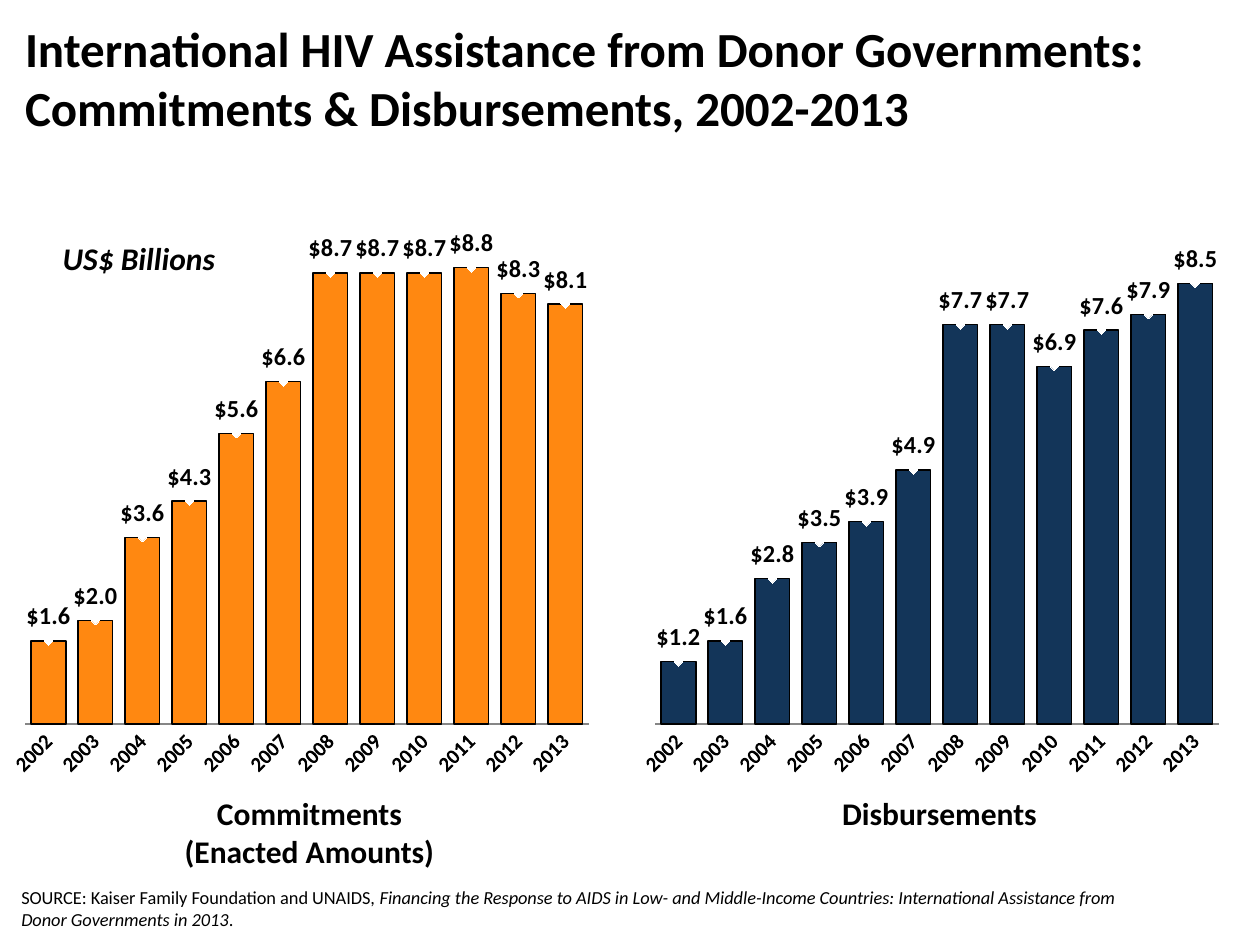
from dataclasses import dataclass

from lxml.etree import SubElement
from pptx import Presentation
from pptx.chart.data import CategoryChartData
from pptx.dml.color import RGBColor
from pptx.enum.chart import XL_CHART_TYPE, XL_LABEL_POSITION, XL_MARKER_STYLE, XL_TICK_MARK
from pptx.enum.text import MSO_ANCHOR, MSO_AUTO_SIZE, PP_ALIGN
from pptx.oxml import parse_xml
from pptx.oxml.ns import nsdecls, qn
from pptx.util import Cm, Pt


@dataclass(frozen=True)
class Theme:
    font: str = "Calibri"
    text: RGBColor = RGBColor(0, 0, 0)
    paper: RGBColor = RGBColor(255, 255, 255)
    axis: RGBColor = RGBColor(0x86, 0x86, 0x86)
    orange: RGBColor = RGBColor(0xFF, 0x88, 0x11)
    navy: RGBColor = RGBColor(0x13, 0x35, 0x59)
    title_size: float = 28
    caption_size: float = 18
    label_size: float = 14
    tick_size: float = 12
    source_size: float = 10.5


THEME = Theme()
YEARS = [str(year) for year in range(2002, 2014)]
COMMITMENTS = [1.6, 2.0, 3.6, 4.3, 5.6, 6.6, 8.7, 8.7, 8.7, 8.8, 8.3, 8.1]
DISBURSEMENTS = [1.2, 1.6, 2.8, 3.5, 3.9, 4.9, 7.7, 7.7, 6.9, 7.6, 7.9, 8.5]
DOLLARS = '"$"#,##0.0'
PLOT_LAYOUT = {
    "layoutTarget": "inner", "xMode": "edge", "yMode": "edge",
    "x": 0.016, "y": 0.076, "w": 0.968, "h": 0.823,
}


def set_values(target, values):
    for name, value in values.items():
        setattr(target, name, value)


def format_font(font, size, bold=False, italic=False):
    set_values(font, {"name": THEME.font, "size": Pt(size), "bold": bold, "italic": italic})
    font.color.rgb = THEME.text


def place(shape, box):
    set_values(shape, dict(zip(("left", "top", "width", "height"), map(Cm, box))))


def add_title(slide, box, text):
    title = slide.shapes.title
    place(title, box)
    set_values(title.text_frame, {
        "text": text, "word_wrap": True,
        "vertical_anchor": MSO_ANCHOR.TOP, "auto_size": MSO_AUTO_SIZE.NONE,
    })
    paragraph = title.text_frame.paragraphs[0]
    paragraph.alignment = PP_ALIGN.LEFT
    format_font(paragraph.runs[0].font, THEME.title_size, bold=True)


def add_caption(slide, box, lines, italic=False):
    frame = slide.shapes.add_textbox(*map(Cm, box)).text_frame
    set_values(frame, {
        "text": "\n".join(lines), "word_wrap": False,
        "auto_size": MSO_AUTO_SIZE.SHAPE_TO_FIT_TEXT,
    })
    for paragraph in frame.paragraphs:
        paragraph.alignment = PP_ALIGN.CENTER
        format_font(paragraph.runs[0].font, THEME.caption_size, bold=True, italic=italic)


def add_source(slide, box, parts):
    frame = slide.shapes.add_textbox(*map(Cm, box)).text_frame
    set_values(frame, {"word_wrap": True, "vertical_anchor": MSO_ANCHOR.BOTTOM})
    for text, italic in parts:
        run = frame.paragraphs[0].add_run()
        run.text = text
        format_font(run.font, THEME.source_size, italic=italic)


def set_plot_layout(plot_area):
    for layout in plot_area.findall(qn("c:layout")):
        plot_area.remove(layout)
    layout = parse_xml(f"<c:layout {nsdecls('c')}><c:manualLayout/></c:layout>")
    for name, value in PLOT_LAYOUT.items():
        SubElement(layout[0], qn(f"c:{name}")).set("val", str(value))
    plot_area.insert(0, layout)


def move_last_series_to_line(plot_area):
    bars = plot_area.find(qn("c:barChart"))
    series = bars.findall(qn("c:ser"))[-1]
    for element in series.findall(qn("c:invertIfNegative")):
        series.remove(element)
    lines = parse_xml(
        f"<c:lineChart {nsdecls('c')}><c:grouping val='standard'/>"
        "<c:varyColors val='0'/></c:lineChart>"
    )
    lines.append(series)
    SubElement(lines, qn("c:marker")).set("val", "1")
    for axis in bars.findall(qn("c:axId")):
        SubElement(lines, qn("c:axId")).set("val", axis.get("val"))
    bars.addnext(lines)


def format_axes(chart):
    set_values(chart.value_axis, {
        "minimum_scale": 0, "maximum_scale": 10,
        "has_major_gridlines": False, "visible": False,
    })
    axis = chart.category_axis
    set_values(axis, {
        "major_tick_mark": XL_TICK_MARK.NONE, "minor_tick_mark": XL_TICK_MARK.NONE,
    })
    axis.format.line.width = Pt(0.75)
    axis.format.line.color.rgb = THEME.axis
    format_font(axis.tick_labels.font, THEME.tick_size, bold=True)
    body = axis._element.find(qn("c:txPr")).find(qn("a:bodyPr"))
    body.set("rot", "-2700000")
    body.set("vert", "horz")


def format_marker_series(series):
    series.smooth = False
    series.format.line.fill.background()
    set_values(series.marker, {"style": XL_MARKER_STYLE.DIAMOND, "size": 5})
    series.marker.format.fill.solid()
    series.marker.format.fill.fore_color.rgb = THEME.paper
    series.marker.format.line.fill.background()
    labels = series.data_labels
    set_values(labels, {
        "show_value": True, "position": XL_LABEL_POSITION.ABOVE,
        "number_format": DOLLARS, "number_format_is_linked": False,
    })
    format_font(labels.font, THEME.label_size, bold=True)


def add_funding_panel(slide, box, values, color, caption, caption_width):
    left, top, width, height = box
    data = CategoryChartData(number_format=DOLLARS)
    data.categories = YEARS
    for name in ("Series 1", "Series 2"):
        data.add_series(name, values)
    chart = slide.shapes.add_chart(
        XL_CHART_TYPE.COLUMN_STACKED, *map(Cm, box), data
    ).chart
    set_values(chart, {"has_legend": False, "has_title": False})
    format_font(chart.font, THEME.caption_size)

    plot_area = chart._chartSpace.chart.plotArea
    set_plot_layout(plot_area)
    move_last_series_to_line(plot_area)
    format_axes(chart)

    bars, lines = chart.plots
    set_values(bars, {"gap_width": 35, "overlap": 100, "vary_by_categories": False})
    column = bars.series[0]
    column.format.fill.solid()
    column.format.fill.fore_color.rgb = color
    column.format.line.color.rgb = THEME.text
    column.format.line.width = Pt(0.75)
    format_marker_series(lines.series[0])

    caption_left = left + width / 2 + 0.11 - caption_width / 2
    caption_height = 0.23 + 0.79 * len(caption)
    add_caption(slide, (caption_left, top + height, caption_width, caption_height), caption)


def main():
    presentation = Presentation()
    set_values(presentation, {"slide_width": Cm(25.4), "slide_height": Cm(19.05)})
    slide = presentation.slides.add_slide(presentation.slide_layouts[5])
    add_title(slide, (0.25, 0.25, 24.9, 2.54),
              "International HIV Assistance from Donor Governments: "
              "Commitments & Disbursements, 2002-2013")
    add_funding_panel(slide, (0.2, 3.18, 11.86, 12.7), COMMITMENTS, THEME.orange,
                      ["Commitments", "(Enacted Amounts)"], 5.72)
    add_funding_panel(slide, (12.9, 3.18, 11.86, 12.7), DISBURSEMENTS, THEME.navy,
                      ["Disbursements"], 4.47)
    add_caption(slide, (1, 4.7, 3.6, 1.02), ["US$ Billions"], italic=True)
    add_source(slide, (0.18, 17.35, 23.1, 1.52), [
        ("SOURCE: Kaiser Family Foundation and UNAIDS, ", False),
        ("Financing the Response to AIDS in Low- and Middle-Income Countries: "
         "International Assistance from Donor Governments in 2013", True),
        (".", False),
    ])
    presentation.save("out.pptx")


if __name__ == "__main__":
    main()
